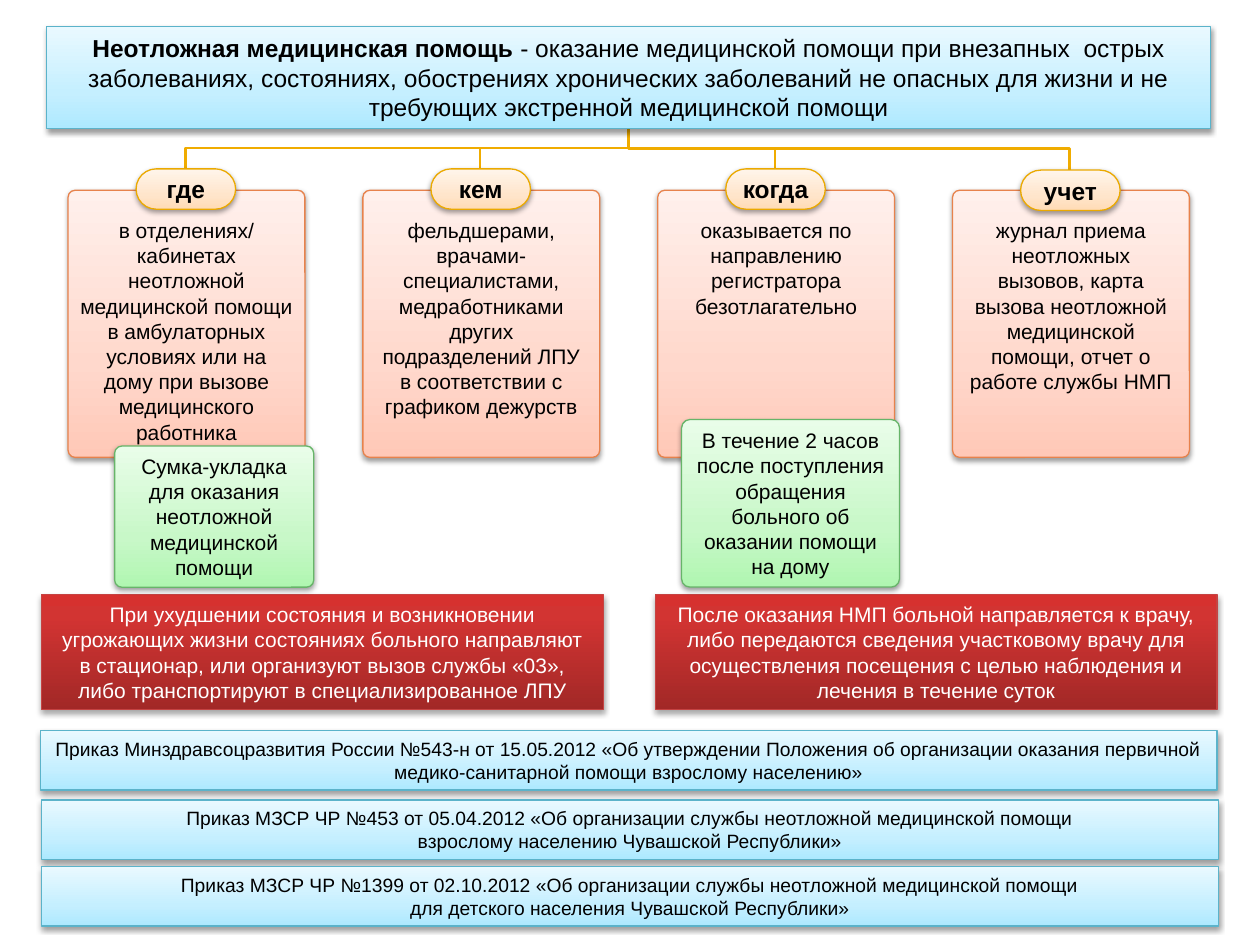
from pptx import Presentation
from pptx.dml.color import RGBColor
from pptx.enum.shapes import MSO_CONNECTOR, MSO_SHAPE
from pptx.enum.text import MSO_ANCHOR, MSO_AUTO_SIZE, PP_ALIGN
from pptx.oxml import parse_xml
from pptx.oxml.ns import nsdecls, qn
from pptx.util import Inches, Pt

RECT, ROUND = MSO_SHAPE.RECTANGLE, MSO_SHAPE.ROUNDED_RECTANGLE
ELBOW = MSO_CONNECTOR.ELBOW
TOP, MIDDLE = MSO_ANCHOR.TOP, MSO_ANCHOR.MIDDLE
GROW, FIXED = MSO_AUTO_SIZE.SHAPE_TO_FIT_TEXT, MSO_AUTO_SIZE.NONE
CENTER = PP_ALIGN.CENTER

BLACK = RGBColor(0x00, 0x00, 0x00)
WHITE = RGBColor(0xFF, 0xFF, 0xFF)
GOLD = RGBColor(0xF0, 0xAC, 0x00)


def palette(line, *stops, text=BLACK, middle=35, alpha=38):
    colors = [RGBColor.from_string(c) for c in stops]
    return {"line": RGBColor.from_string(line), "text": text, "alpha": alpha,
            "stops": list(zip((0, middle, 100), colors))}


BLUE = palette("5BB3CA", "ADE9FF", "C5EFFF", "E9F9FF")
RED = palette("C54342", "A22827", "D23432", "D6312F",
              text=WHITE, middle=80, alpha=35)
PEACH = palette("E7824C", "FFC8B7", "FFD8CC", "FFF0EC")
AMBER = palette("EBA900", "FFDBB5", "FFE5CB", "FFF5EB")
GREEN = palette("67B569", "B0F6B1", "C8F8C8", "E9FDE9")

HUB = (4.99, 1.01)
STEP = 2.34
COLUMNS = [
    ("где", 1.34, 0.08, "в отделениях/ кабинетах неотложной медицинской помощи "
     "в амбулаторных условиях или на дому при вызове медицинского работника"),
    ("кем", 1.34, 0.1, "фельдшерами, врачами-специалистами, медработниками других "
     "подразделений ЛПУ в соответствии с графиком дежурств"),
    ("когда", 1.34, 0.1, "оказывается по направлению регистратора безотлагательно"),
    ("учет", 1.35, 0.1, "журнал приема неотложных вызовов, карта вызова неотложной "
     "медицинской помощи, отчет о работе службы НМП"),
]
DEFINITION = [
    ("Неотложная медицинская помощь", True),
    (" - оказание медицинской помощи при внезапных  острых заболеваниях, "
     "состояниях, обострениях хронических заболеваний не опасных для жизни "
     "и не требующих экстренной медицинской помощи", False),
]
NOTES = [
    (0.91, 3.54, 1.58, 1.12,
     "Сумка-укладка для оказания неотложной медицинской помощи"),
    (5.41, 3.33, 1.73, 1.33, "В течение 2 часов после поступления обращения "
     "больного об оказании помощи на дому"),
]
ACTIONS = [
    (0.33, "При ухудшении состояния и возникновении угрожающих жизни состояниях "
     "больного направляют в стационар, или организуют вызов службы «03», "
     "либо транспортируют в специализированное ЛПУ"),
    (5.2, "После оказания НМП больной направляется к врачу, либо передаются "
     "сведения участковому врачу для осуществления посещения с целью "
     "наблюдения и\nлечения в течение суток"),
]
ORDERS = [
    (0.32, 5.8, "Приказ Минздравсоцразвития России №543-н от 15.05.2012 "
     "«Об утверждении Положения об организации оказания первичной "
     "медико-санитарной помощи взрослому населению»"),
    (0.33, 6.35, "Приказ МЗСР ЧР №453 от 05.04.2012 «Об организации службы "
     "неотложной медицинской помощи\nвзрослому населению Чувашской Республики»"),
    (0.33, 6.88, "Приказ МЗСР ЧР №1399 от 02.10.2012 «Об организации службы "
     "неотложной медицинской помощи\nдля детского населения Чувашской Республики»"),
]


class Deck:
    font = "Arial"

    def __init__(self, prs):
        self.slide = prs.slides.add_slide(prs.slide_layouts[6])

    def branch(self, x, y):
        x0, y0 = HUB
        w, h = y - y0, abs(x - x0)
        left, top = (x + x0 - w) / 2, (y + y0 - h) / 2
        ends, angle = (left, left + w), 90
        if x > x0:
            ends, angle = ends[::-1], 270
        c = self.slide.shapes.add_connector(
            ELBOW, Inches(ends[0]), Inches(top), Inches(ends[1]), Inches(top + h))
        c.line.color.rgb = GOLD
        c.line.width = Pt(1.5)
        spPr = c._element.spPr
        spPr.find(qn("a:xfrm")).set("rot", str(angle * 60000))
        spPr.append(parse_xml(f"<a:effectLst {nsdecls('a')}/>"))

    def paint(self, sp, colors):
        sp.line.color.rgb = colors["line"]
        sp.line.width = Pt(0.75)
        sp.fill.gradient()
        spPr = sp._element.spPr
        stops = "".join(
            f'<a:gs pos="{pos * 1000}"><a:srgbClr val="{rgb}"/></a:gs>'
            for pos, rgb in colors["stops"])
        spPr.replace(spPr.find(qn("a:gradFill")), parse_xml(
            f'<a:gradFill {nsdecls("a")} rotWithShape="1"><a:gsLst>{stops}</a:gsLst>'
            '<a:lin ang="16200000" scaled="0"/></a:gradFill>'))
        sp.shadow.inherit = False
        spPr.find(qn("a:effectLst")).append(parse_xml(
            f'<a:outerShdw {nsdecls("a")} blurRad="{Pt(3.1)}" dist="{Pt(1.6)}" '
            'dir="5400000" rotWithShape="0"><a:srgbClr val="000000">'
            f'<a:alpha val="{colors["alpha"] * 1000}"/></a:srgbClr></a:outerShdw>'))

    def box(self, kind, at, colors, runs, size, insets=(0.1, 0.05, 0.1, 0.05),
            radius=None, anchor=MIDDLE, fit=GROW):
        sp = self.slide.shapes.add_shape(kind, *map(Inches, at))
        if radius is not None:
            sp.adjustments[0] = radius
        self.paint(sp, colors)
        tf = sp.text_frame
        frame = {"word_wrap": True, "vertical_anchor": anchor, "auto_size": fit}
        sides = ("margin_left", "margin_top", "margin_right", "margin_bottom")
        frame.update(zip(sides, map(Inches, insets)))
        for name, value in frame.items():
            setattr(tf, name, value)
        p = tf.paragraphs[0]
        p.alignment = CENTER
        for text, bold in runs:
            for i, line in enumerate(text.split("\n")):
                if i:
                    p.add_line_break()
                r = p.add_run()
                r.text = line
                r.font.color.rgb = colors["text"]
                style = {"name": self.font, "size": Pt(size), "bold": bold}
                for name, value in style.items():
                    setattr(r.font, name, value)


def main():
    prs = Presentation()
    prs.slide_width, prs.slide_height = Inches(10), Inches(7.5)
    deck = Deck(prs)
    centers = [1.47 + STEP * i for i in range(len(COLUMNS))]
    for x, (_, top, _, _) in zip(centers, COLUMNS):
        deck.branch(x, top)
    for left, top, text in ORDERS:
        deck.box(RECT, (left, top, 9.34, 0.47), BLUE, [(text, False)], 11)
    for left, text in ACTIONS:
        deck.box(RECT, (left, 4.72, 4.46, 0.91), RED, [(text, False)], 12)
    deck.box(RECT, (0.37, 0.21, 9.24, 0.81), BLUE, DEFINITION, 14,
             insets=(0.08, 0.05, 0.08, 0.05))
    for x, (name, top, side, text) in zip(centers, COLUMNS):
        deck.box(ROUND, (x - 0.93, 1.51, 1.88, 2.12), PEACH, [(text, False)], 12,
                 insets=(side, 0.2, side, 0.05), radius=0.03, anchor=TOP, fit=FIXED)
        deck.box(ROUND, (x - 0.39, top, 0.79, 0.32), AMBER, [(name, True)], 14,
                 insets=(0.04,) * 4, radius=0.5, fit=FIXED)
    for *at, text in NOTES:
        deck.box(ROUND, at, GREEN, [(text, False)], 12,
                 insets=(0.08, 0.04, 0.08, 0.04), radius=0.05)
    prs.save("out.pptx")


if __name__ == "__main__":
    main()
